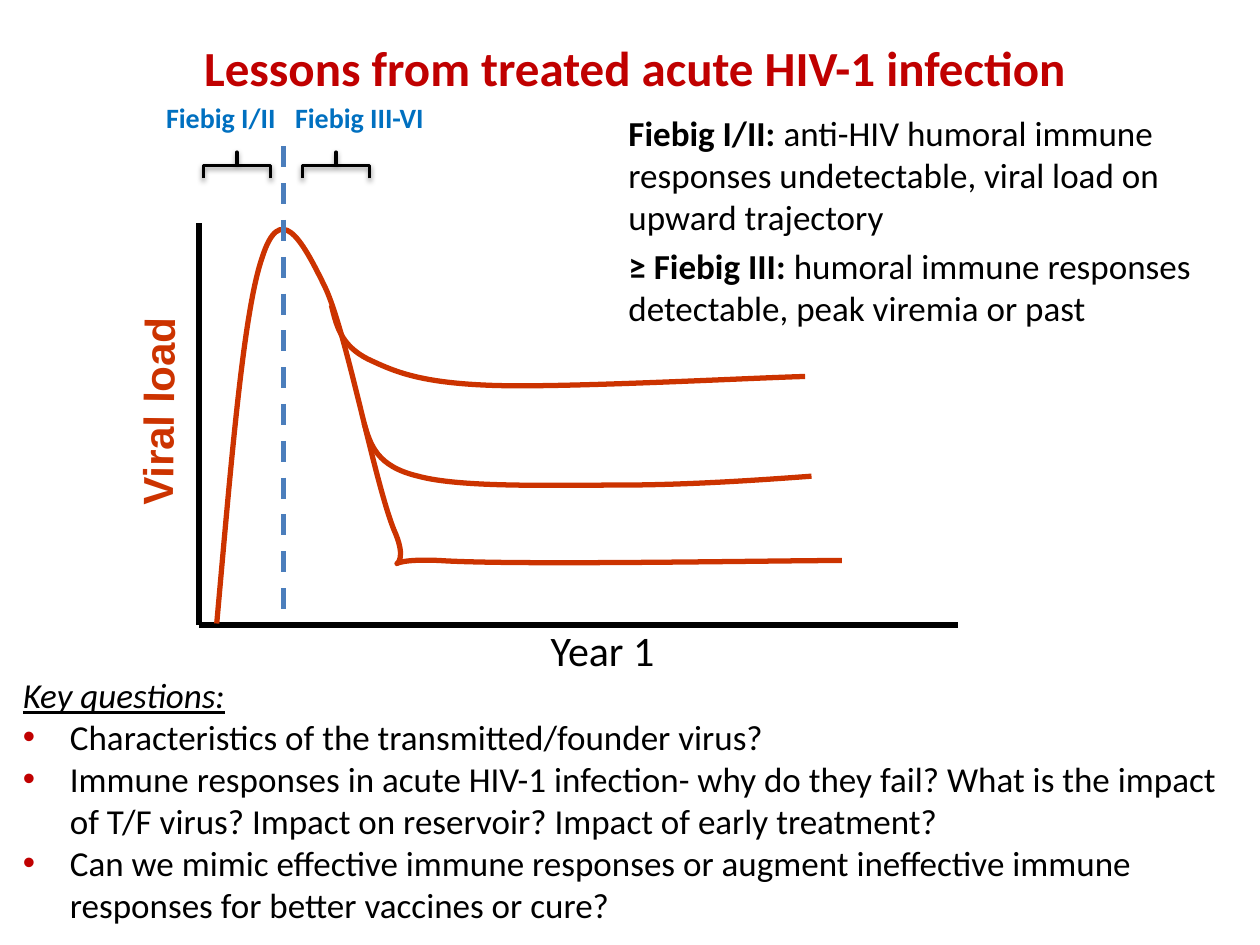
"""Builds the slide on lessons from treated acute HIV-1 infection."""
from lxml import etree
from pptx import Presentation
from pptx.dml.color import RGBColor
from pptx.enum.dml import MSO_LINE
from pptx.enum.shapes import MSO_CONNECTOR, MSO_SHAPE
from pptx.enum.text import MSO_AUTO_SIZE, PP_ALIGN
from pptx.oxml.ns import qn
from pptx.util import Cm, Pt

STRAIGHT = MSO_CONNECTOR.STRAIGHT
RIGHT_BRACE = MSO_SHAPE.RIGHT_BRACE
DASH = MSO_LINE.DASH
LEFT, CENTER = PP_ALIGN.LEFT, PP_ALIGN.CENTER
GROW, FIXED = MSO_AUTO_SIZE.SHAPE_TO_FIT_TEXT, MSO_AUTO_SIZE.NONE

BLACK, RED, ORANGE, BLUE, DASH_BLUE = "000000", "C00000", "CC3300", "0070C0", "4B7EBC"
INDENT = 0.95
STAGE_TAB = 2.6

TITLE = "Lessons from treated acute HIV-1 infection"
STAGES = "Fiebig I/II\tFiebig III-VI"
DEFINITIONS = [
    [("Fiebig I/II: ", "b"),
     ("anti-HIV humoral immune responses undetectable, viral load on upward trajectory", "")],
    [("≥ Fiebig III: ", "b"),
     ("humoral immune responses detectable, peak viremia or past", "")],
]
QUESTIONS_HEADING = "Key questions:"
QUESTIONS = [
    ("Characteristics of the transmitted/founder virus?", True),
    ("Immune responses in acute HIV-1 infection- why do they fail? What is the impact", True),
    ("of T/F virus? Impact on reservoir? Impact of early treatment?", False),
    ("Can we mimic effective immune responses or augment ineffective immune", True),
    ("responses for better vaccines or cure?", False),
]
VIRAL_LOAD_CURVES = [
    [(4.37, 12.57), (4.65, 9.45), (4.9, 6.32), (5.28, 5.21),
     (5.64, 4.06), (6.07, 4.8), (6.53, 5.74),
     (6.99, 6.65), (7.57, 9.86), (7.98, 10.77),
     (8.36, 11.71), (7.37, 11.23), (8.86, 11.3),
     (10.36, 11.4), (15.62, 11.3), (16.97, 11.3)],
    [(6.68, 6.15), (6.78, 6.55), (6.86, 6.96), (7.42, 7.24),
     (7.95, 7.49), (8.46, 7.72), (9.93, 7.77),
     (11.4, 7.82), (15.11, 7.62), (16.23, 7.59)],
    [(7.34, 8.53), (7.47, 8.97), (7.59, 9.4), (8.43, 9.6),
     (9.27, 9.83), (11.07, 9.78), (12.4, 9.78),
     (13.72, 9.78), (15.04, 9.7), (16.36, 9.6)],
]
AXIS_ORIGIN = (4.01, 12.6)
AXIS_ENDS = [(4.01, 4.5), (19.31, 12.6)]
PEAK_LINE = ((5.72, 2.95), (5.72, 12.57))
BRACE_LEFTS = (4.51, 6.51)


def rgb(color):
    return RGBColor.from_string(color)


def add_text(parent, paragraphs, box, *, size, color=BLACK, font="Calibri", styles="",
             align=LEFT, wrap=True, fit=GROW, line_spacing=None, before=0, rotation=0):
    """Add a text box of paragraphs, each a string or a list of (text, styles) runs."""
    textbox = parent.shapes.add_textbox(*map(Cm, box))
    textbox.rotation = rotation
    frame = textbox.text_frame
    frame.word_wrap = wrap
    frame.auto_size = fit
    for index, runs in enumerate(paragraphs):
        paragraph = frame.add_paragraph() if index else frame.paragraphs[0]
        paragraph.alignment = align
        paragraph.space_before = Pt(before)
        if line_spacing:
            paragraph.line_spacing = line_spacing
        for text, style in [(runs, styles)] if isinstance(runs, str) else runs:
            run = paragraph.add_run()
            run.text = text
            run.font.name, run.font.size = font, Pt(size)
            run.font.color.rgb = rgb(color)
            run.font.bold = "b" in style
            run.font.italic = "i" in style
            run.font.underline = "u" in style
    return textbox.text_frame.paragraphs


def indent_question(paragraph, bulleted):
    properties = paragraph._p.get_or_add_pPr()
    properties.set("marL", str(Cm(INDENT)))
    if bulleted:
        properties.set("indent", str(-Cm(INDENT)))
        bullet_color = etree.SubElement(properties, qn("a:buClr"))
        etree.SubElement(bullet_color, qn("a:srgbClr"), val=RED)
        etree.SubElement(properties, qn("a:buFont"), typeface="Arial")
        etree.SubElement(properties, qn("a:buChar"), char="•")


def add_tab_stop(paragraph, position):
    tabs = etree.SubElement(paragraph._p.get_or_add_pPr(), qn("a:tabLst"))
    etree.SubElement(tabs, qn("a:tab"), pos=str(Cm(position)), algn="l")


def style_line(line, color, width):
    line.color.rgb = rgb(color)
    line.width = Pt(width)


def add_line(parent, start, end, color):
    connector = parent.shapes.add_connector(STRAIGHT, *map(Cm, start + end))
    style_line(connector.line, color, 3)
    etree.SubElement(connector._element.spPr, qn("a:effectLst"))
    return connector


def add_curve(parent, points):
    """Draw cubic Bezier segments by regrouping the outline's points in threes."""
    start, *controls = [tuple(map(Cm, point)) for point in points]
    builder = parent.shapes.build_freeform(*start)
    builder.add_line_segments(controls, close=False)
    curve = builder.convert_to_shape()
    outline = next(curve._element.iter(qn("a:path")))
    segments = outline.findall(qn("a:lnTo"))
    for first in range(0, len(segments), 3):
        bezier = etree.SubElement(outline, qn("a:cubicBezTo"))
        for segment in segments[first:first + 3]:
            bezier.append(segment[0])
            outline.remove(segment)
    curve.shadow.inherit = False
    curve.fill.background()
    style_line(curve.line, ORANGE, 3)


def add_brace(parent, left):
    brace = parent.shapes.add_shape(RIGHT_BRACE, Cm(left), Cm(2.66), Cm(0.53), Cm(1.35))
    brace.rotation = 270
    brace._element.spPr.find(qn("a:xfrm")).set("flipV", "1")
    brace.adjustments[0], brace.adjustments[1] = 0, 0.5
    brace.fill.background()
    style_line(brace.line, BLACK, 2)
    brace.shadow.inherit = False
    effects = brace._element.spPr.find(qn("a:effectLst"))
    shadow = etree.SubElement(effects, qn("a:outerShdw"), blurRad=str(Pt(3.1)),
                              dist=str(Pt(1.6)), dir="5400000", rotWithShape="0")
    shade = etree.SubElement(shadow, qn("a:srgbClr"), val=BLACK)
    etree.SubElement(shade, qn("a:alpha"), val="38000")


def main():
    presentation = Presentation()
    presentation.slide_width, presentation.slide_height = Cm(25.4), Cm(19.05)
    slide = presentation.slides.add_slide(presentation.slide_layouts[6])

    add_text(slide, [TITLE], (0.69, 0.33, 24.21, 1.88), size=28, color=RED, styles="b",
             align=CENTER, fit=FIXED, line_spacing=1.25)
    question_lines = [text for text, _ in QUESTIONS]
    _, *listed = add_text(slide, [[(QUESTIONS_HEADING, "iu")], *question_lines],
                          (0.21, 13.46, 24.99, 5.38), size=20, wrap=False)
    for paragraph, (_, bulleted) in zip(listed, QUESTIONS):
        indent_question(paragraph, bulleted)

    diagram = slide.shapes.add_group_shape()
    for end in AXIS_ENDS:
        add_line(diagram, AXIS_ORIGIN, end, BLACK)
    for points in VIRAL_LOAD_CURVES:
        add_curve(diagram, points)
    add_text(diagram, ["Year 1"], (10.85, 12.47, 3.25, 1.1), size=24)
    add_text(diagram, ["Viral load"], (0.79, 7.59, 4.6, 1.1), size=24, color=ORANGE,
             font="Arial", styles="b", rotation=270.7)
    for left in BRACE_LEFTS:
        add_brace(diagram, left)
    stages = add_text(diagram, [STAGES], (3.1, 1.9, 15.42, 0.94), size=16, color=BLUE,
                      styles="b")
    add_tab_stop(stages[0], STAGE_TAB)
    add_line(diagram, *PEAK_LINE, DASH_BLUE).line.dash_style = DASH

    add_text(slide, DEFINITIONS, (12.42, 2.13, 12.5, 4.7), size=20, before=4)

    presentation.save("out.pptx")


if __name__ == "__main__":
    main()
